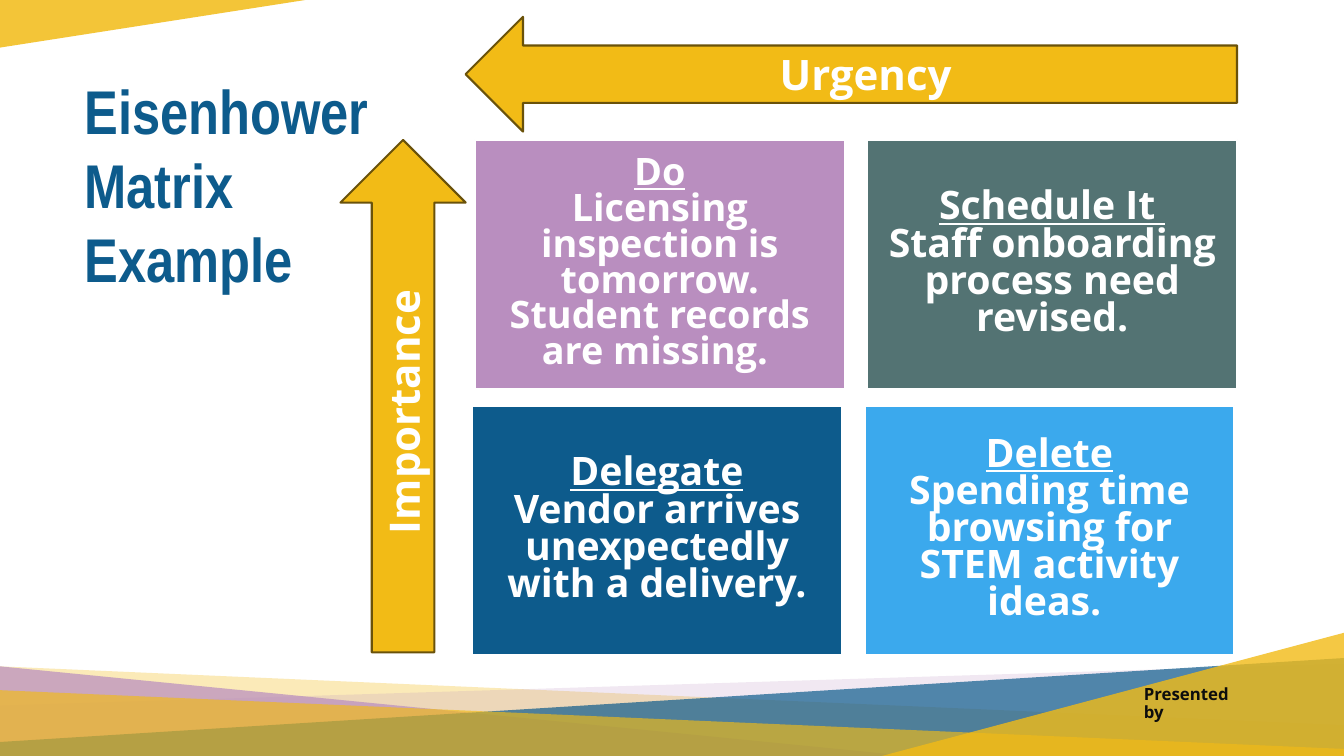
from lxml import etree
from pptx import Presentation
from pptx.dml.color import RGBColor
from pptx.enum.shapes import MSO_SHAPE
from pptx.enum.text import MSO_ANCHOR, PP_ALIGN
from pptx.oxml.ns import qn
from pptx.util import Pt

RECTANGLE = MSO_SHAPE.RECTANGLE
UP_ARROW = MSO_SHAPE.UP_ARROW
LEFT_ARROW = MSO_SHAPE.LEFT_ARROW
MIDDLE = MSO_ANCHOR.MIDDLE
CENTER = PP_ALIGN.CENTER

GOLD = RGBColor(0xF2, 0xBB, 0x16)
BROWN = RGBColor(0x6A, 0x52, 0x0A)
MAUVE = RGBColor(0xB9, 0x8E, 0xBF)
TEAL = RGBColor(0x53, 0x73, 0x73)
NAVY = RGBColor(0x0D, 0x5B, 0x8C)
SKY = RGBColor(0x3B, 0xA9, 0xED)
WHITE = RGBColor(0xFF, 0xFF, 0xFF)
INK = RGBColor(0x0D, 0x0D, 0x0D)

BODY_FONT = "Open Sans"
TITLE_FONT = "Arial Narrow"
WIDTH, HEIGHT = 960, 540

BANDS = [
    (GOLD, 30, [(0, 476), (WIDTH, 518.4), (WIDTH, HEIGHT), (0, HEIGHT)]),
    (MAUVE, 20, [(0, 504), (WIDTH, 474), (WIDTH, HEIGHT), (0, HEIGHT)]),
    (MAUVE, 72, [(0, 476), (649, HEIGHT), (0, HEIGHT)]),
    (NAVY, 70, [(0, 530.5), (WIDTH, 469.5), (WIDTH, HEIGHT), (0, HEIGHT)]),
    (GOLD, 65, [(0, 493), (WIDTH, 535), (WIDTH, HEIGHT), (0, HEIGHT)]),
    (GOLD, 80, [(WIDTH, 451.5), (WIDTH, HEIGHT), (630, HEIGHT)]),
    (GOLD, 85, [(0, 0), (218, 0), (0, 34.5)]),
]

QUADRANTS = [
    [("Do", "Licensing inspection is tomorrow. Student records are missing. ", MAUVE, 27),
     ("Schedule It ", "Staff onboarding process need revised.", TEAL, 28)],
    [("Delegate", "Vendor arrives unexpectedly with a delivery.", NAVY, 28),
     ("Delete", "Spending time browsing for STEM activity ideas. ", SKY, 28)],
]


def set_font(paragraph, size, color, name=BODY_FONT):
    """Set the bold face that all text on the slide uses."""
    font = paragraph.font
    font.name = name
    font.size = Pt(size)
    font.bold = True
    font.color.rgb = color


def add_band(slide, color, opacity, corners):
    """Draw one translucent background polygon."""
    builder = slide.shapes.build_freeform(*corners[0], scale=float(Pt(1)))
    builder.add_line_segments(corners[1:], close=True)
    band = builder.convert_to_shape()
    band.shadow.inherit = False
    band.line.fill.background()
    band.fill.solid()
    band.fill.fore_color.rgb = color
    tint = band.element.spPr.find(qn("a:solidFill")).find(qn("a:srgbClr"))
    etree.SubElement(tint, qn("a:alpha"), val=str(opacity * 1000))


def add_label(slide, text, left, top, width, height, size, color, name=BODY_FONT):
    """Add a wrapped text box and return its paragraph."""
    label = slide.shapes.add_textbox(Pt(left), Pt(top), Pt(width), Pt(height))
    label.text_frame.word_wrap = True
    paragraph = label.text_frame.paragraphs[0]
    paragraph.text = text
    set_font(paragraph, size, color, name)
    return paragraph


def add_block(slide, preset, left, top, width, height, fill, outline):
    """Add a filled, outlined shape with centred text."""
    block = slide.shapes.add_shape(preset, Pt(left), Pt(top), Pt(width), Pt(height))
    block.shadow.inherit = False
    block.fill.solid()
    block.fill.fore_color.rgb = fill
    block.line.color.rgb = outline
    block.line.width = Pt(1.5)
    block.text_frame.word_wrap = True
    block.text_frame.vertical_anchor = MIDDLE
    block.text_frame.paragraphs[0].alignment = CENTER
    return block


def add_axis(slide, preset, text, left, top, width, height):
    """Add a labelled axis arrow."""
    axis = add_block(slide, preset, left, top, width, height, GOLD, BROWN)
    paragraph = axis.text_frame.paragraphs[0]
    paragraph.text = text
    set_font(paragraph, 30, WHITE)
    return axis


def add_quadrant(slide, heading, example, color, size, left, top, width, height):
    """Add one matrix card with an underlined heading."""
    card = add_block(slide, RECTANGLE, left, top, width, height, color, WHITE)
    frame = card.text_frame
    frame.margin_left = frame.margin_right = Pt(8.5)
    frame.margin_top = frame.margin_bottom = Pt(8.5)
    paragraph = frame.paragraphs[0]
    paragraph.line_spacing = 0.79
    heading_run = paragraph.add_run()
    heading_run.text = heading
    heading_run.font.underline = True
    paragraph.add_line_break()
    paragraph.add_run().text = example
    set_font(paragraph, size, WHITE)


def add_matrix(slide, left, top, width, height):
    """Lay out the four cards, the lower row set slightly to the left."""
    card_width, card_height = 264.2, 177.8
    column_step, row_step = width - card_width, height - card_height
    for row, cards in enumerate(QUADRANTS):
        for column, card in enumerate(cards):
            add_quadrant(slide, *card, left + column * column_step - row * 2,
                         top + row * row_step, card_width, card_height)


def main():
    """Build and save the Eisenhower matrix slide."""
    deck = Presentation()
    deck.slide_width, deck.slide_height = Pt(WIDTH), Pt(HEIGHT)
    slide = deck.slides.add_slide(deck.slide_layouts[6])
    for band in BANDS:
        add_band(slide, *band)
    presenter = add_label(slide, "Presented by", 810, 486.7, 88, 20, 12, INK)
    presenter.line_spacing = 0.9
    add_label(slide, "Eisenhower \vMatrix\vExample", 53.3, 48.2, 677, 103.7,
              44.1, NAVY, TITLE_FONT)
    importance = add_axis(slide, UP_ARROW, "Importance", 243.2, 100, 89.4, 366)
    importance.element.txBody.bodyPr.set("vert", "vert270")
    add_axis(slide, LEFT_ARROW, "Urgency", 332.6, 12, 551, 82)
    add_matrix(slide, 339.2, 100, 544.5, 367.8)
    deck.save("out.pptx")


if __name__ == "__main__":
    main()
